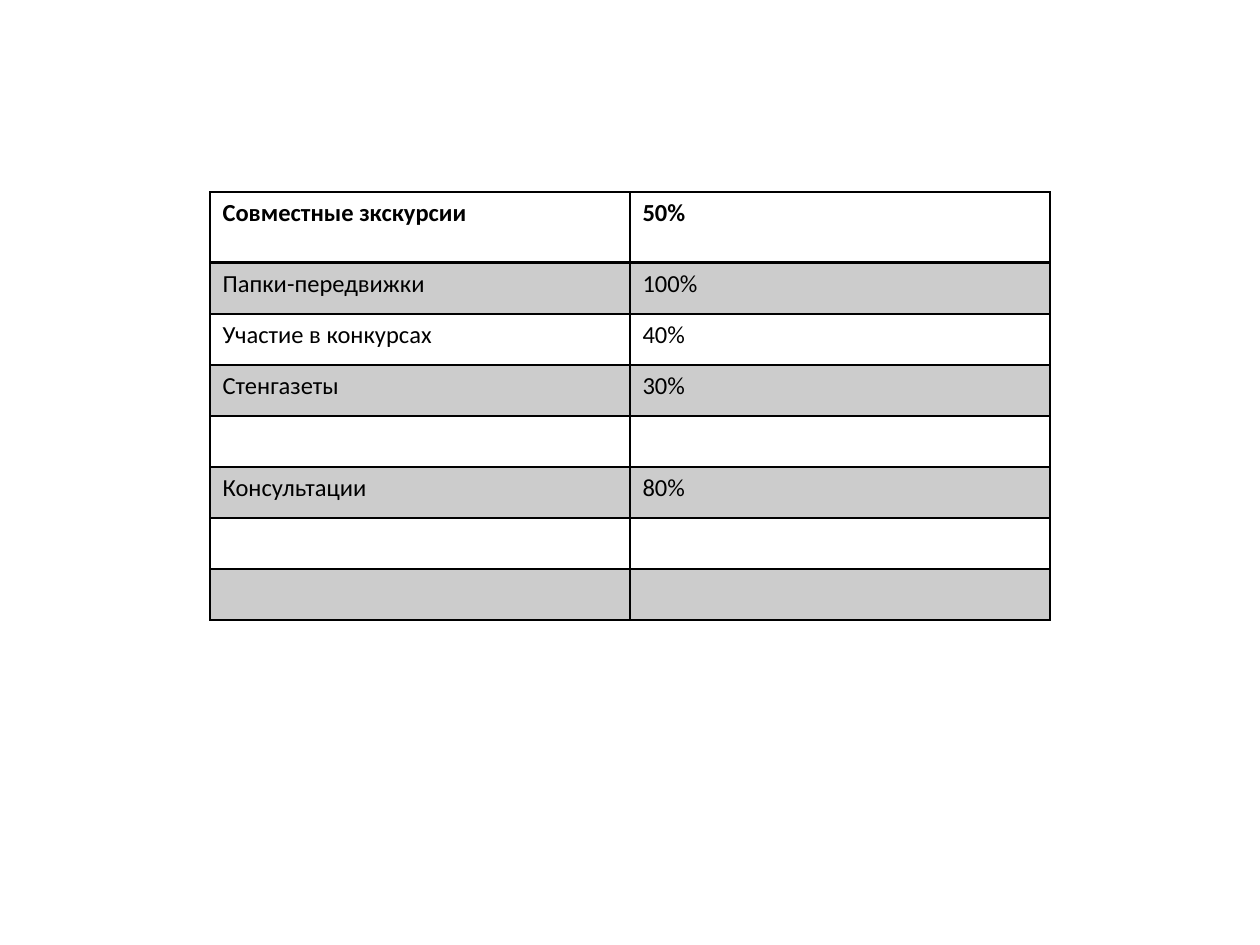
from pptx import Presentation
from pptx import util as u
from pptx.dml.color import RGBColor
from pptx.oxml import parse_xml
from pptx.oxml.ns import nsdecls

PX = 914400 // 126
BLACK = RGBColor(0, 0, 0)
ROWS = [
    ("Совместные зкскурсии", "50%"),
    ("Папки-передвижки", "100%"),
    ("Участие в конкурсах", "40%"),
    ("Стенгазеты", "30%"),
    ("", ""),
    ("Консультации", "80%"),
    ("", ""),
    ("", ""),
]
HEAD, ROW, COL = 71, 51, 420


def edge(cell, side, width):
    line = parse_xml(
        f'<a:ln{side} {nsdecls("a")} w="{u.Pt(width)}"><a:solidFill>'
        f'<a:srgbClr val="{BLACK}"/></a:solidFill></a:ln{side}>'
    )
    cell._tc.get_or_add_tcPr().append(line)


prs = Presentation()
prs.slide_width = 1260 * PX
prs.slide_height = 945 * PX
slide = prs.slides.add_slide(prs.slide_layouts[6])

high = HEAD + ROW * (len(ROWS) - 1)
frame = slide.shapes.add_table(
    len(ROWS), 2, 210 * PX, 192 * PX, 2 * COL * PX, high * PX
)
table = frame.table
table.first_row = False
table.horz_banding = False
for col in table.columns:
    col.width = COL * PX

for i, words in enumerate(ROWS):
    table.rows[i].height = (ROW if i else HEAD) * PX
    for j, word in enumerate(words):
        cell = table.cell(i, j)
        for side in "LRTB":
            thick = (i, side) in ((0, "B"), (1, "T"))
            edge(cell, side, 2 if thick else 1)
        if i % 2:
            cell.fill.solid()
            cell.fill.fore_color.rgb = BLACK
            tint = cell._tc.tcPr.find("./{*}solidFill/{*}srgbClr")
            tint.append(parse_xml(f'<a:alpha {nsdecls("a")} val="20000"/>'))
        else:
            cell.fill.background()
        if word:
            run = cell.text_frame.paragraphs[0].add_run()
            run.text = word
            run.font.name = "Calibri"
            run.font.size = u.Pt(14)
            run.font.bold = i == 0
            run.font.color.rgb = BLACK

prs.save("out.pptx")
